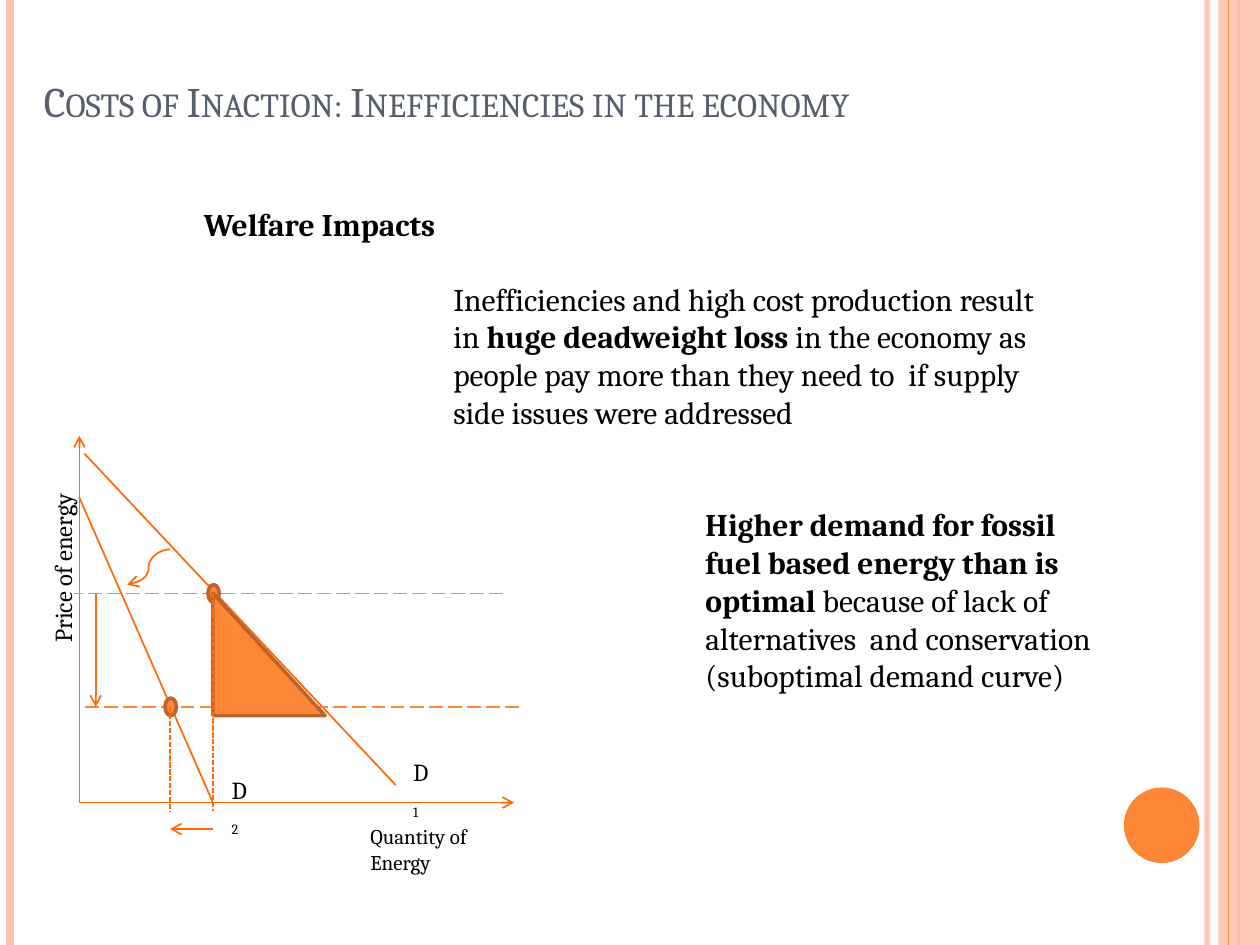
from lxml.etree import SubElement
from pptx import Presentation
from pptx.dml.color import RGBColor
from pptx.enum.dml import MSO_LINE
from pptx.enum.shapes import MSO_CONNECTOR, MSO_SHAPE
from pptx.enum.text import MSO_ANCHOR, MSO_AUTO_SIZE
from pptx.oxml.ns import qn
from pptx.util import Inches, Pt

COLORS = {
    "band": "FEC3AE",
    "accent": "FE8637",
    "curve": "FF6B0A",
    "outline": "BC6329",
    "title": "575F6D",
    "text": "000000",
}
FONT = "Cambria"

# Key places on the diagram
AXIS_LEFT, AXIS_BOTTOM = 0.63, 6.37
HIGH_PRICE, LOW_PRICE = 4.71, 5.61
HIGH_QUANTITY, LOW_QUANTITY = 1.69, 1.35
DROP_BOTTOM, SHIFT_LEVEL, PRICE_ARROW_LEFT = 6.44, 6.58, 0.76


def rgb(name):
    return RGBColor.from_string(COLORS[name])


def set_alpha(element, percent):
    color = next(element.iter(qn("a:srgbClr")))
    SubElement(color, qn("a:alpha"), val=str(percent * 1000))


def add_line(shapes, start, end, color="curve", width=1, dash=None,
             arrow=False, alpha=None, kind=MSO_CONNECTOR.STRAIGHT):
    points = [Inches(value) for value in (*start, *end)]
    connector = shapes.add_connector(kind, *points)
    connector.line.color.rgb = rgb(color)
    connector.line.width = Pt(width)
    if dash:
        connector.line.dash_style = dash
    line = connector.line._get_or_add_ln()
    if alpha:
        set_alpha(line, alpha)
    if arrow:
        SubElement(line, qn("a:tailEnd"), type="arrow")
    SubElement(connector._element.spPr, qn("a:effectLst"))


def add_filled(shapes, kind, box, fill="accent", outline=None, alpha=None):
    shape = shapes.add_shape(kind, *(Inches(value) for value in box))
    shape.shadow.inherit = False
    shape.fill.solid()
    shape.fill.fore_color.rgb = rgb(fill)
    if alpha:
        set_alpha(shape._element.spPr, alpha)
    if outline:
        shape.line.color.rgb = rgb(outline)
        shape.line.width = Pt(2)
    else:
        shape.line.fill.background()


def add_text(shapes, box, runs, size, color="text", frame_format=None,
             vertical=False):
    """Each run is a pair of its text and a dict of run properties."""
    text_box = shapes.add_textbox(*(Inches(value) for value in box))
    frame = text_box.text_frame
    settings = {"word_wrap": True, "auto_size": MSO_AUTO_SIZE.SHAPE_TO_FIT_TEXT}
    for name, value in (settings | (frame_format or {})).items():
        setattr(frame, name, value)
    if vertical:
        frame._txBody.bodyPr.set("vert", "vert270")
    paragraph = frame.paragraphs[0]
    for text, properties in runs:
        run = paragraph.add_run()
        run.text = text
        for name, value in {"name": FONT, "size": Pt(size)}.items():
            setattr(run.font, name, value)
        run.font.color.rgb = rgb(color)
        for name, value in properties.items():
            run._r.get_or_add_rPr().set(name, value)


def add_decoration(shapes):
    def edge(left, color, width, alpha=None):
        add_line(shapes, (left, 0), (left, 7.5), color, width, alpha=alpha)

    edge(9.58, "band", 3, 93)
    edge(0.08, "band", 4.5)
    edge(9.83, "accent", 1.5)
    add_filled(shapes, MSO_SHAPE.RECTANGLE, (9.67, 0, 0.33, 7.5), "band", alpha=87)
    edge(9.75, "accent", 0.75)
    add_filled(shapes, MSO_SHAPE.OVAL, (8.92, 6.25, 0.6, 0.6))


def add_words(shapes):
    bold = {"b": "1"}
    add_text(shapes, (0.25, 0.25, 8.83, 0.8),
             [("Costs of Inaction: Inefficiencies in the economy", {"cap": "small"})],
             24, "title",
             {"vertical_anchor": MSO_ANCHOR.BOTTOM, "auto_size": MSO_AUTO_SIZE.NONE})
    add_text(shapes, (3.5, 2.17, 5, 1.62), [
        ("Inefficiencies and high cost production result in ", {}),
        ("huge deadweight loss ", bold),
        ("in the economy as people pay more than they need to  if supply side "
         "issues were addressed", {}),
    ], 18)
    add_text(shapes, (5.5, 3.96, 3.42, 1.92), [
        ("Higher demand for fossil fuel based energy than is optimal ", bold),
        ("because of lack of alternatives  and conservation "
         "(suboptimal demand curve)", {}),
    ], 18)
    add_text(shapes, (1.52, 1.58, 3.23, 0.4), [("Welfare Impacts", bold)], 18)


def add_diagram(shapes):
    origin = (AXIS_LEFT, AXIS_BOTTOM)
    equilibria = [(HIGH_QUANTITY, HIGH_PRICE), (LOW_QUANTITY, LOW_PRICE)]

    # Axes and demand curves
    add_line(shapes, origin, (AXIS_LEFT, 3.46), arrow=True)
    add_line(shapes, origin, (4.08, AXIS_BOTTOM), arrow=True)
    add_line(shapes, (0.67, 3.6), (3.14, 6.23))
    add_line(shapes, (AXIS_LEFT, 3.95), (HIGH_QUANTITY, AXIS_BOTTOM))

    # Price levels
    for right, left, price in [(3.99, 0.59, HIGH_PRICE),
                               (4.12, AXIS_LEFT, LOW_PRICE)]:
        add_line(shapes, (right, price), (left, price), "accent",
                 dash=MSO_LINE.LONG_DASH)
    add_line(shapes, equilibria[0], (HIGH_QUANTITY, LOW_PRICE))

    # Equilibrium points and deadweight loss
    for quantity, price in equilibria:
        add_filled(shapes, MSO_SHAPE.OVAL,
                   (quantity - 0.04, price - 0.07, 0.09, 0.14), outline="outline")
    add_filled(shapes, MSO_SHAPE.RIGHT_TRIANGLE,
               (HIGH_QUANTITY, HIGH_PRICE, 0.89, 0.97), outline="outline")

    # Axis names
    add_text(shapes, (2.84, 6.49, 1.32, 0.5), [("Quantity of Energy", {})], 12)
    add_text(shapes, (0.33, 3.19, 0.44, 2.01), [("Price of energy", {})], 14,
             vertical=True)

    # Drops to the quantity axis, then the arrows of change
    for quantity, price in equilibria:
        add_line(shapes, (quantity, price), (quantity, DROP_BOTTOM),
                 dash=MSO_LINE.SQUARE_DOT)
    add_line(shapes, (PRICE_ARROW_LEFT, HIGH_PRICE), (PRICE_ARROW_LEFT, LOW_PRICE),
             arrow=True)
    add_line(shapes, (HIGH_QUANTITY, SHIFT_LEVEL), (LOW_QUANTITY, SHIFT_LEVEL),
             arrow=True)
    add_line(shapes, (1.35, 4.36), (1.01, 4.64), arrow=True,
             kind=MSO_CONNECTOR.CURVE)

    # Demand curve names
    for left, top, number in [(3.18, 5.96, "1"), (1.74, 6.1, "2")]:
        add_text(shapes, (left, top, 0.34, 0.28),
                 [("D", {}), (number, {"baseline": "-25000"})], 14)


def main():
    presentation = Presentation()
    presentation.slide_width = Inches(10)
    presentation.slide_height = Inches(7.5)
    slide = presentation.slides.add_slide(presentation.slide_layouts[6])
    add_decoration(slide.shapes)
    add_words(slide.shapes)
    add_diagram(slide.shapes.add_group_shape().shapes)
    presentation.save("out.pptx")


if __name__ == "__main__":
    main()
